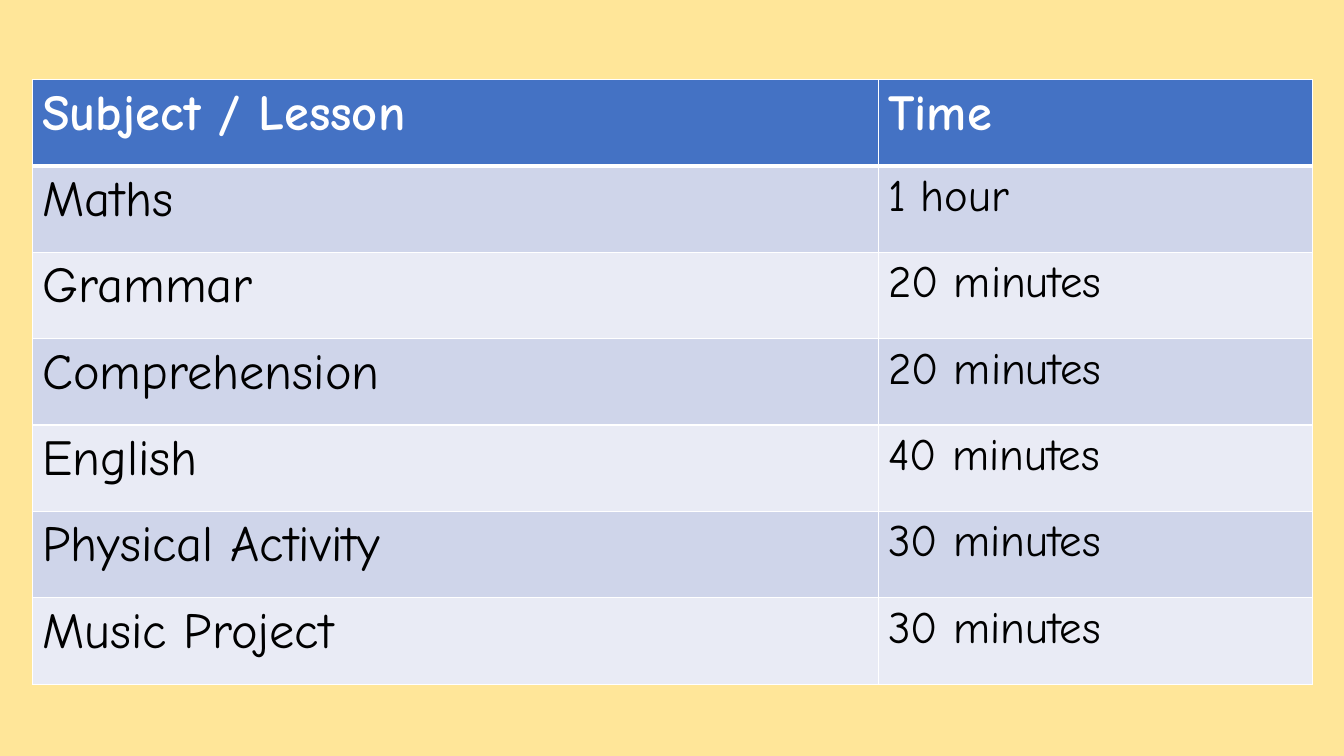
from lxml import etree
from pptx import Presentation
from pptx.dml.color import RGBColor
from pptx.oxml.ns import qn
from pptx.util import Inches, Pt

FONT = "Comic Neue"
WHITE, BLACK = "FFFFFF", "000000"
HEADER_FILL = "4472C4"
BAND_FILLS = ["E9EBF5", "CFD5EA"]
TIMETABLE = [
    ("Subject / Lesson", "Time"),
    ("Maths", "1 hour"),
    ("Grammar", "20 minutes"),
    ("Comprehension", "20 minutes"),
    ("English", "40 minutes"),
    ("Physical Activity", "30 minutes"),
    ("Music Project", "30 minutes"),
]
COLUMN_WIDTHS = [8.39, 4.31]
ROW_HEIGHT = 0.857


def paint(fill, color):
    fill.solid()
    fill.fore_color.rgb = RGBColor.from_string(color)


def add_border(cell, side, points):
    """Add a white line on one side; call in the order lnL, lnR, lnT, lnB."""
    properties = cell._tc.get_or_add_tcPr()
    line = etree.SubElement(properties, qn(f"a:{side}"), w=str(Pt(points)))
    solid = etree.SubElement(line, qn("a:solidFill"))
    etree.SubElement(solid, qn("a:srgbClr"), val=WHITE)


prs = Presentation()
prs.slide_width, prs.slide_height = Inches(13.33), Inches(7.5)
slide = prs.slides.add_slide(prs.slide_layouts[6])
paint(slide.background.fill, "FFE699")

timetable = slide.shapes.add_table(
    len(TIMETABLE), len(COLUMN_WIDTHS), Inches(0.32), Inches(0.79),
    Inches(sum(COLUMN_WIDTHS)), Inches(ROW_HEIGHT * len(TIMETABLE))).table
for column, width in zip(timetable.columns, COLUMN_WIDTHS):
    column.width = Inches(width)

for row, entries in enumerate(TIMETABLE):
    is_header = row == 0
    for col, entry in enumerate(entries):
        cell = timetable.cell(row, col)
        for side in ("lnL", "lnR", "lnT", "lnB"):
            under_header = (row, side) in ((0, "lnB"), (1, "lnT"))
            add_border(cell, side, 3 if under_header else 1)
        paint(cell.fill, HEADER_FILL if is_header else BAND_FILLS[row % 2])

        cell.text_frame.text = entry
        font = cell.text_frame.paragraphs[0].runs[0].font
        font.name = FONT
        font.size = Pt(36 if is_header or col == 0 else 32)
        font.bold = is_header
        font.color.rgb = RGBColor.from_string(WHITE if is_header else BLACK)

prs.save("out.pptx")
